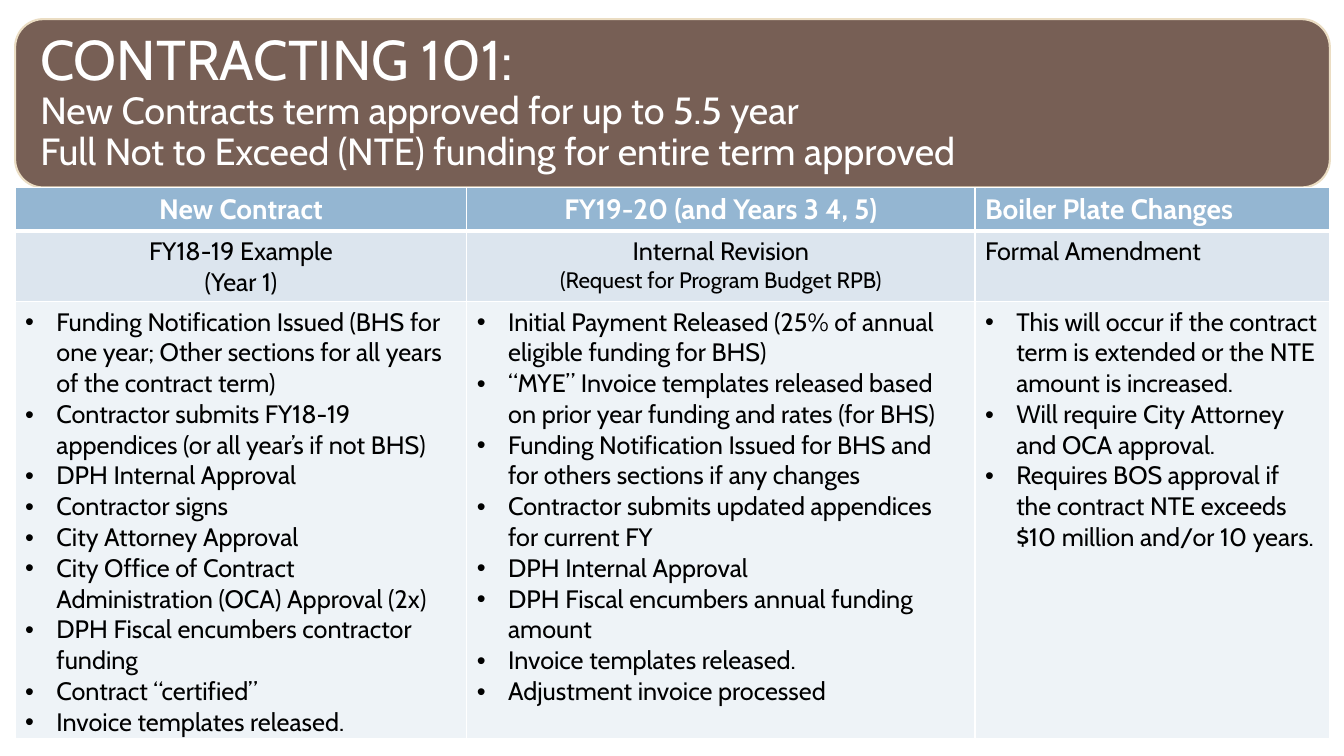
from pptx import Presentation
from pptx.dml.color import RGBColor
from pptx.enum.shapes import MSO_SHAPE as SHAPE
from pptx.enum.text import MSO_ANCHOR as ANCHOR, PP_ALIGN as ALIGN
from pptx.oxml import parse_xml
from pptx.oxml.ns import nsdecls
from pptx.util import Pt

PX = 9144
FONT = "Cabin"
COLORS = {
    "banner": "775F55",
    "banner_line": "EBDDC3",
    "header": "94B6D2",
    "subheader": "DCE5EE",
    "body": "EEF3F7",
    "white": "FFFFFF",
    "black": "000000",
}


def rgb(name):
    return RGBColor.from_string(COLORS[name])


def style(span, size, color, bold=False):
    span.font.name = FONT
    span.font.size = Pt(size)
    span.font.bold = bold
    span.font.color.rgb = rgb(color)


deck = Presentation()
deck.slide_width = 1333 * PX
deck.slide_height = 750 * PX
page = deck.slides.add_slide(deck.slide_layouts[6])

banner = page.shapes.add_shape(SHAPE.ROUNDED_RECTANGLE, 15 * PX, 19 * PX, 1304 * PX, 167 * PX)
banner.shadow.inherit = False
banner.fill.solid()
banner.fill.fore_color.rgb = rgb("banner")
banner.line.color.rgb = rgb("banner_line")
banner.line.width = Pt(1.5)

title = page.shapes.add_textbox(23 * PX, 27 * PX, 1287 * PX, 150 * PX)
frame = title.text_frame
frame.word_wrap = True
frame.vertical_anchor = ANCHOR.MIDDLE
frame.margin_left = frame.margin_right = frame.margin_top = frame.margin_bottom = 17 * PX
para = frame.paragraphs[0]
para.text = (
    "CONTRACTING 101:\v"
    "New Contracts term approved for up to 5.5 year\v"
    "Full Not to Exceed (NTE) funding for entire term approved"
)
para.line_spacing = 0.9
for span, size in zip(para.runs, (40, 27, 27)):
    style(span, size, "white")

rows = [
    ["New Contract", "FY19-20 (and Years 3 4, 5)", "Boiler Plate Changes"],
    [
        "FY18-19 Example\n(Year 1)",
        "Internal Revision\n(Request for Program Budget RPB)",
        "Formal Amendment",
    ],
    [
        "Funding Notification Issued (BHS for one year; Other sections for all years of the contract term)\n"
        "Contractor submits FY18-19 appendices (or all year’s if not BHS)\n"
        "DPH Internal Approval\n"
        "Contractor signs\n"
        "City Attorney Approval\n"
        "City Office of Contract Administration (OCA) Approval (2x)\n"
        "DPH Fiscal encumbers contractor funding\n"
        "Contract “certified”\n"
        "Invoice templates released.",
        "Initial Payment Released (25% of annual eligible funding for BHS)\n"
        "“MYE” Invoice templates released based on prior year funding and rates (for BHS)\n"
        "Funding Notification Issued for BHS and for others sections if any changes\n"
        "Contractor submits updated appendices for current FY\n"
        "DPH Internal Approval\n"
        "DPH Fiscal encumbers annual funding amount\n"
        "Invoice templates released.\n"
        "Adjustment invoice processed",
        "This will occur if the contract term is extended or the NTE amount is increased.\n"
        "Will require City Attorney and OCA approval.\n"
        "Requires BOS approval if the contract NTE exceeds $10 million and/or 10 years.",
    ],
]
row_styles = [("header", 20, "white"), ("subheader", 18, "black"), ("body", 18, "black")]
row_heights = [42, 68, 433]
column_widths = [448, 504, 352]

table = page.shapes.add_table(
    3, 3, 15 * PX, 186 * PX, sum(column_widths) * PX, sum(row_heights) * PX
).table
for column, width in zip(table.columns, column_widths):
    column.width = width * PX
for row, height in zip(table.rows, row_heights):
    row.height = height * PX

for r, (fill, size, color) in enumerate(row_styles):
    for c, text in enumerate(rows[r]):
        cell = table.cell(r, c)
        cell.fill.solid()
        cell.fill.fore_color.rgb = rgb(fill)
        cell.text_frame.text = text
        properties = cell._tc.get_or_add_tcPr()
        for index, side in enumerate("LRTB"):
            thick = (r, side) in ((0, "B"), (1, "T"))
            properties.insert(index, parse_xml(
                f'<a:ln{side} {nsdecls("a")} w="{Pt(3 if thick else 1)}"><a:solidFill>'
                f'<a:srgbClr val="{COLORS["white"]}"/></a:solidFill></a:ln{side}>'
            ))
        for para in cell.text_frame.paragraphs:
            if r == 2:
                layout = para._p.get_or_add_pPr()
                layout.set("marL", str(31 * PX))
                layout.set("indent", str(-31 * PX))
                layout.append(parse_xml(f'<a:buFont {nsdecls("a")} typeface="Arial"/>'))
                layout.append(parse_xml(f'<a:buChar {nsdecls("a")} char="•"/>'))
            elif c < 2:
                para.alignment = ALIGN.CENTER
            for span in para.runs:
                style(span, 16 if span.text.startswith("(Request") else size, color, r == 0)

deck.save("out.pptx")
